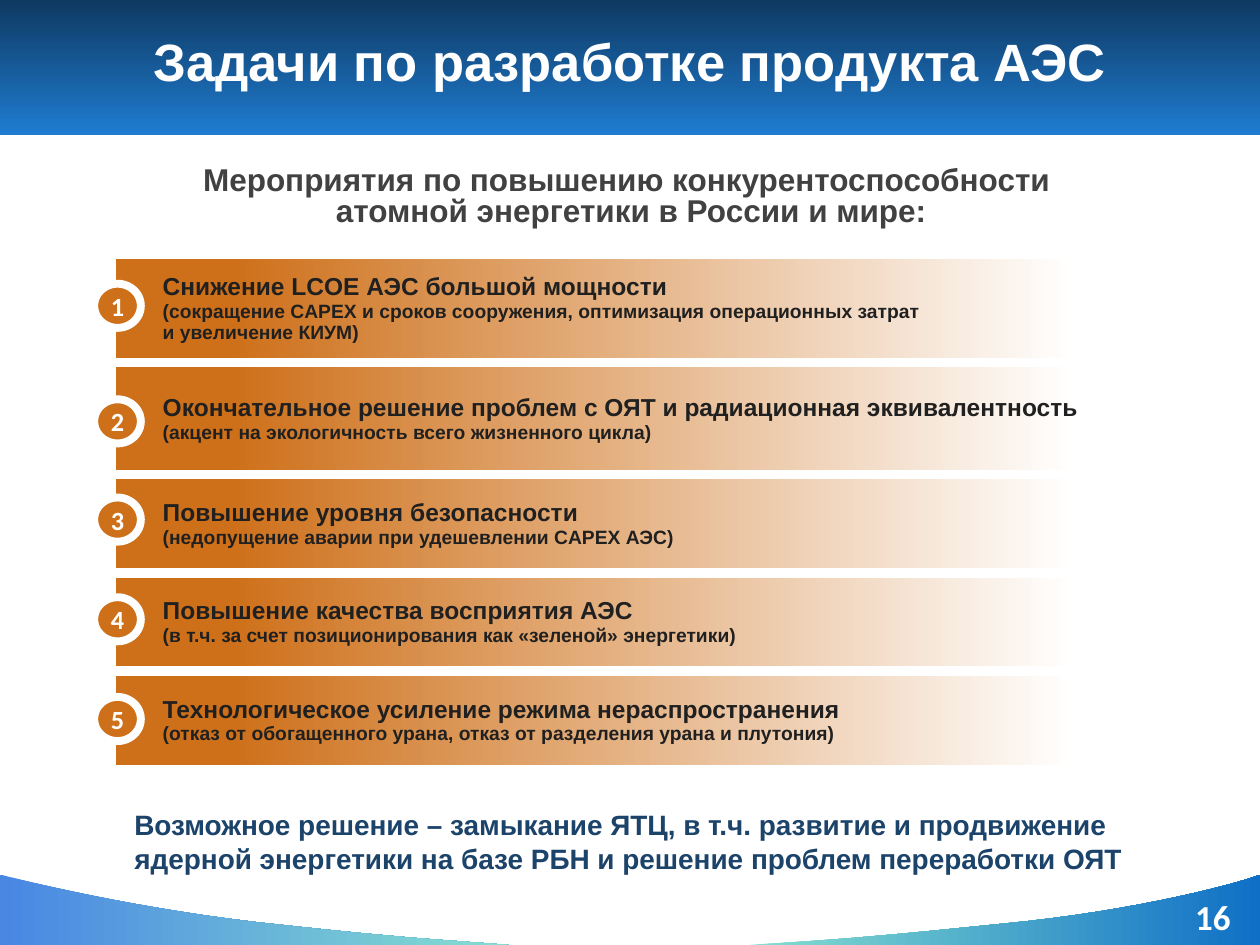
"""Build the slide on tasks for the nuclear plant product."""
from lxml.etree import SubElement as Sub
from pptx import Presentation as Deck
from pptx.dml.color import RGBColor as RGB
from pptx.enum.shapes import MSO_SHAPE as Kind
from pptx.enum.text import MSO_ANCHOR as Anchor, PP_ALIGN as Align
from pptx.oxml.ns import qn
from pptx.util import Cm, Pt

WHITE = RGB(0xFF, 0xFF, 0xFF)
ORANGE = RGB(0xCE, 0x70, 0x1A)
INK = RGB(0x20, 0x20, 0x20)
GREY = RGB(0x41, 0x41, 0x41)
NAVY = RGB(0x1C, 0x43, 0x6A)
DARK = RGB(0x0E, 0x39, 0x61)
BLUE = RGB(0x1F, 0x7C, 0xD1)
SKY = RGB(0x49, 0x87, 0xE3)
AQUA = RGB(0x85, 0xDF, 0xD0)
DEEP = RGB(0x0F, 0x6F, 0xC6)

WIDE, HIGH = 25.4, 19.05
ROWS = [
    (2.18, 5.72, "Снижение LCOE АЭС большой мощности",
     "(сокращение CAPEX и сроков сооружения, оптимизация операционных затрат\n"
     "и увеличение КИУМ)"),
    (2.26, 8.05, "Окончательное решение проблем с ОЯТ и радиационная эквивалентность",
     "(акцент на экологичность всего жизненного цикла)"),
    (1.98, 10.03, "Повышение уровня безопасности",
     "(недопущение аварии при удешевлении CAPEX АЭС)"),
    (1.98, 12.04, "Повышение качества восприятия АЭС",
     "(в т.ч. за счет позиционирования как «зеленой» энергетики)"),
    (1.98, 14.05, "Технологическое усиление режима нераспространения",
     "(отказ от обогащенного урана, отказ от разделения урана и плутония)"),
]
WAVES = [
    ([(10.26, 19.05), (8.56, 18.92), (7.98, 18.9), (5.18, 18.59),
      (2.34, 18.26), (0, 17.63), (0, 17.63)], SKY, AQUA),
    ([(15.09, 19.05), (16.76, 18.95), (17.48, 18.9), (20.22, 18.62),
      (22.99, 18.36), (25.17, 17.75), (25.4, 17.63)], AQUA, DEEP),
]


def style(item, form):
    """Set each format value on the item."""
    for key, value in form.items():
        setattr(item, key, value)


def blend(fill, first, last, angle=0, ends=(0, 1)):
    """Give a fill a two-stop gradient."""
    fill.gradient()
    fill.gradient_angle = angle
    for stop, tone, place in zip(fill.gradient_stops, (first, last), ends):
        stop.color.rgb = tone
        stop.position = place


def write(par, text, size, tone, face="Arial"):
    """Add bold text to a paragraph, with a break at each new line."""
    for num, line in enumerate(text.split("\n")):
        if num:
            par.add_line_break()
        run = par.add_run()
        run.text = line
        style(run.font, dict(size=Pt(size), name=face, bold=True))
        run.font.color.rgb = tone


def label(slide, box, text, size, tone, face="Arial", pad=(0.2, 0.1),
          frame=None, par=None):
    """Add a text box."""
    shape = slide.shapes.add_textbox(*map(Cm, box))
    side, edge = map(Cm, pad)
    style(shape.text_frame, dict(word_wrap=True, margin_left=side, margin_right=side,
                                 margin_top=edge, margin_bottom=edge, **(frame or {})))
    first = shape.text_frame.paragraphs[0]
    style(first, par or {})
    write(first, text, size, tone, face)


def banner(slide):
    """Add the title band."""
    band = slide.shapes.add_shape(Kind.RECTANGLE, 0, 0, Cm(WIDE), Cm(2.72))
    band.shadow.inherit = False
    band.line.fill.background()
    blend(band.fill, DARK, BLUE, 270)


def curve(start, one, two, end, steps=16):
    """List the points of a cubic curve after its start."""
    for num in range(1, steps + 1):
        t = num / steps
        parts = ((1 - t) ** 3, 3 * t * (1 - t) ** 2, 3 * t * t * (1 - t), t ** 3)
        yield tuple(Cm(sum(p * v for p, v in zip(parts, axis)))
                    for axis in zip(start, one, two, end))


def wave(slide, knots, first, last):
    """Add a curved corner at the foot of the slide."""
    dots = [*curve(*knots[:4]), *curve(*knots[3:])]
    dots.append((Cm(knots[-1][0]), Cm(HIGH)))
    pen = slide.shapes.build_freeform(*map(Cm, knots[0]))
    pen.add_line_segments(dots, close=True)
    shape = pen.convert_to_shape()
    shape.shadow.inherit = False
    shape.line.fill.background()
    blend(shape.fill, first, last)


def border(cell):
    """Draw white rules above and below a cell."""
    props = cell._tc.get_or_add_tcPr()
    for side in ("lnL", "lnR", "lnT", "lnB"):
        rule = Sub(props, qn("a:" + side))
        if side in ("lnL", "lnR"):
            Sub(rule, qn("a:noFill"))
            continue
        rule.set("w", str(Pt(6)))
        Sub(Sub(rule, qn("a:solidFill")), qn("a:srgbClr")).set("val", str(WHITE))


def grid(slide):
    """Add the table of tasks."""
    high = sum(row[0] for row in ROWS)
    table = slide.shapes.add_table(len(ROWS), 2, Cm(2.34), Cm(5.13),
                                   Cm(20.73), Cm(high)).table
    style(table, dict(first_row=False, horz_banding=False))
    for col, width in zip(table.columns, (0.74, 19.99)):
        col.width = Cm(width)
    for row, (tall, _, head, note) in zip(table.rows, ROWS):
        row.height = Cm(tall)
        tab, body = row.cells
        for cell in (tab, body):
            border(cell)
        tab.fill.solid()
        tab.fill.fore_color.rgb = ORANGE
        blend(body.fill, ORANGE, WHITE, ends=(0.08, 0.93))
        style(body, dict(vertical_anchor=Anchor.MIDDLE, margin_left=Cm(0.2),
                         margin_right=Cm(0.2), margin_top=Cm(0.15),
                         margin_bottom=Cm(0.15)))
        par = body.text_frame.paragraphs[0]
        write(par, head, 14, INK)
        par.add_line_break()
        write(par, note, 11, INK)


def badge(slide, top, num):
    """Add a numbered circle."""
    disc = slide.shapes.add_shape(Kind.OVAL, Cm(1.9), Cm(top), Cm(0.94), Cm(0.89))
    disc.shadow.inherit = False
    disc.fill.solid()
    disc.fill.fore_color.rgb = ORANGE
    disc.line.color.rgb = WHITE
    disc.line.width = Pt(4.5)
    style(disc.text_frame, dict(word_wrap=False, vertical_anchor=Anchor.MIDDLE,
                                margin_left=0, margin_right=0,
                                margin_top=0, margin_bottom=0))
    par = disc.text_frame.paragraphs[0]
    par.alignment = Align.CENTER
    write(par, str(num), 15, WHITE, "Calibri")


def main():
    """Build and save the slide."""
    deck = Deck()
    style(deck, dict(slide_width=Cm(WIDE), slide_height=Cm(HIGH)))
    slide = deck.slides.add_slide(deck.slide_layouts[6])
    banner(slide)
    for item in WAVES:
        wave(slide, *item)
    mid = dict(alignment=Align.CENTER)
    label(slide, (0, -0.08, WIDE, 2.77), "Задачи по разработке продукта АЭС", 30, WHITE,
          pad=(0.1, 0.1), frame=dict(vertical_anchor=Anchor.MIDDLE),
          par=dict(line_spacing=0.9, **mid))
    label(slide, (23.7, 18.06, 1.5, 0.89), "16", 20, WHITE, "Calibri", (0, 0), par=mid)
    grid(slide)
    label(slide, (2.44, 3.28, 20.57, 1.42),
          "Мероприятия по повышению конкурентоспособности \n"
          "атомной энергетики в России и мире:", 18, GREY,
          par=dict(line_spacing=0.8, **mid))
    label(slide, (2.51, 16.18, 20.4, 1.57),
          "Возможное решение – замыкание ЯТЦ, в т.ч. развитие и продвижение "
          "ядерной энергетики на базе РБН и решение проблем переработки ОЯТ", 16, NAVY)
    for num, row in enumerate(ROWS, 1):
        badge(slide, row[1], num)
    deck.save("out.pptx")


if __name__ == "__main__":
    main()
